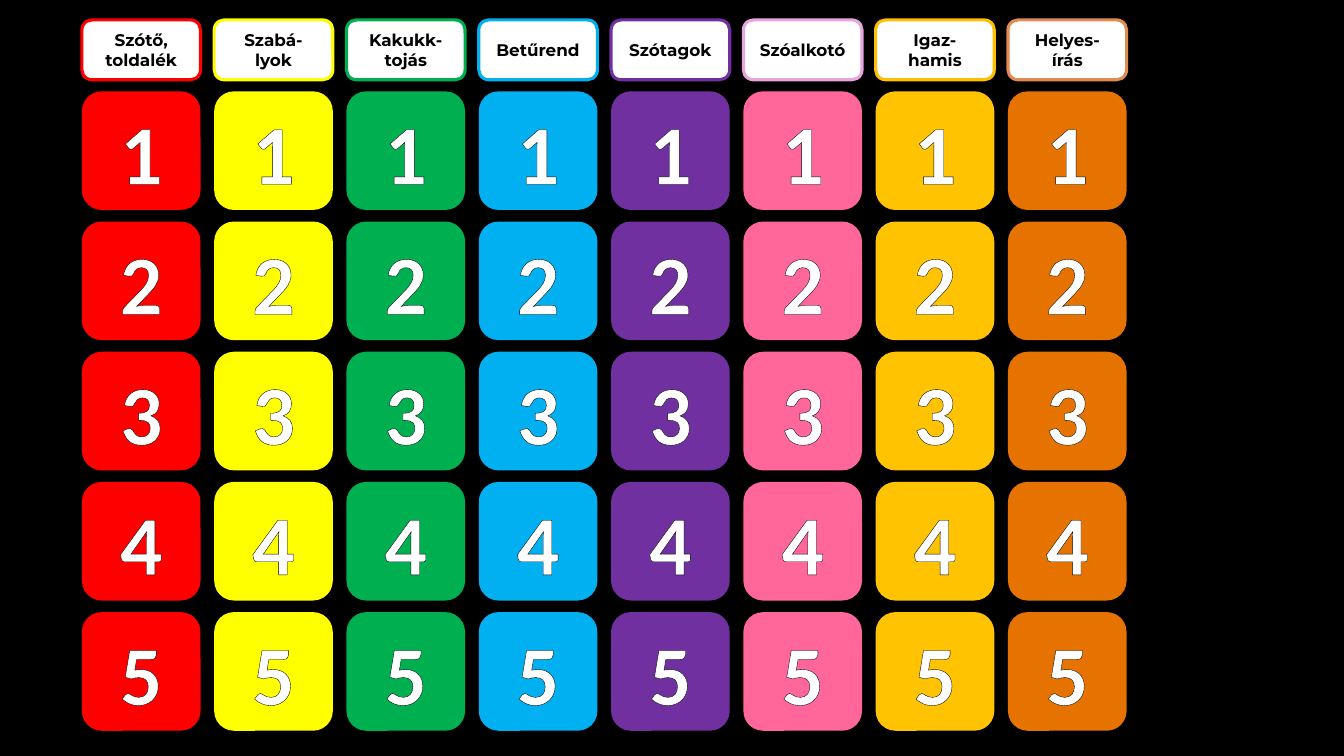
from dataclasses import dataclass

from lxml import etree
from pptx import Presentation
from pptx.dml.color import RGBColor
from pptx.enum.shapes import MSO_SHAPE
from pptx.enum.text import MSO_ANCHOR, PP_ALIGN
from pptx.oxml.ns import qn
from pptx.util import Emu, Pt

ROUNDED = MSO_SHAPE.ROUNDED_RECTANGLE
MIDDLE = MSO_ANCHOR.MIDDLE
CENTER = PP_ALIGN.CENTER

EMU_PER_PX = 9525
SLIDE_WIDTH, SLIDE_HEIGHT = 1280, 720
LEFT, COLUMN_STEP = 78, 126
HEADER_TOP, HEADER_HEIGHT = 19, 57
TILE_TOP, ROW_STEP, TILE_SIZE = 87, 124, 113
LEVELS = 5

CATEGORIES = [
    ("Szótő, toldalék", "FF0000", "FF0000"),
    ("Szabá-lyok", "FFFF00", "FFFF00"),
    ("Kakukk-tojás", "00B050", "00B050"),
    ("Betűrend", "00B0F0", "00B0F0"),
    ("Szótagok", "7030A0", "7030A0"),
    ("Szóalkotó", "FF6699", "E6A5DC"),
    ("Igaz-hamis", "FFC301", "FFC000"),
    ("Helyes-írás", "E67300", "E08B52"),
]


@dataclass(frozen=True)
class Theme:
    black: str = "000000"
    white: str = "FFFFFF"
    header_font: str = "Montserrat"
    header_size: int = 12
    number_font: str = "Calibri"
    number_size: int = 60
    line_width: float = 2.25


def px(length):
    return Emu(length * EMU_PER_PX)


def rgb(color):
    return RGBColor.from_string(color)


class QuizBoard:
    def __init__(self, slide, theme):
        self.slide = slide
        self.theme = theme

    def background(self):
        fill = self.slide.background.fill
        fill.solid()
        fill.fore_color.rgb = rgb(self.theme.black)

    def box(self, bounds, color, text, text_color, font_format):
        shape = self.slide.shapes.add_shape(ROUNDED, *map(px, bounds))
        shape.shadow.inherit = False
        shape.fill.solid()
        shape.fill.fore_color.rgb = rgb(color)
        shape.line.fill.background()
        shape.text_frame.word_wrap = True
        shape.text_frame.vertical_anchor = MIDDLE
        paragraph = shape.text_frame.paragraphs[0]
        paragraph.alignment = CENTER
        run = paragraph.add_run()
        run.text = text
        for name, value in font_format.items():
            setattr(run.font, name, value)
        run.font.color.rgb = rgb(text_color)
        return shape

    def header(self, left, text, border):
        theme = self.theme
        font_format = {"name": theme.header_font, "size": Pt(theme.header_size), "bold": True}
        bounds = (left, HEADER_TOP, TILE_SIZE, HEADER_HEIGHT)
        shape = self.box(bounds, theme.white, text, theme.black, font_format)
        shape.line.color.rgb = rgb(border)
        shape.line.width = Pt(theme.line_width)

    def tile(self, left, top, number, color):
        theme = self.theme
        font_format = {"name": theme.number_font, "size": Pt(theme.number_size), "bold": True}
        bounds = (left, top, TILE_SIZE, TILE_SIZE)
        shape = self.box(bounds, color, str(number), theme.white, font_format)
        self.outline_text(shape.text_frame.paragraphs[0].runs[0])

    def outline_text(self, run):
        outline = etree.Element(qn("a:ln"), w=str(Pt(self.theme.line_width)))
        fill = etree.SubElement(outline, qn("a:solidFill"))
        etree.SubElement(fill, qn("a:srgbClr"), val=self.theme.black)
        run._r.get_or_add_rPr().insert(0, outline)


def main():
    presentation = Presentation()
    presentation.slide_width = px(SLIDE_WIDTH)
    presentation.slide_height = px(SLIDE_HEIGHT)
    slide = presentation.slides.add_slide(presentation.slide_layouts[6])
    board = QuizBoard(slide, Theme())
    board.background()
    for column, (title, color, border) in enumerate(CATEGORIES):
        left = LEFT + column * COLUMN_STEP
        board.header(left, title, border)
        for row in range(LEVELS):
            board.tile(left, TILE_TOP + row * ROW_STEP, row + 1, color)
    presentation.save("out.pptx")


if __name__ == "__main__":
    main()
